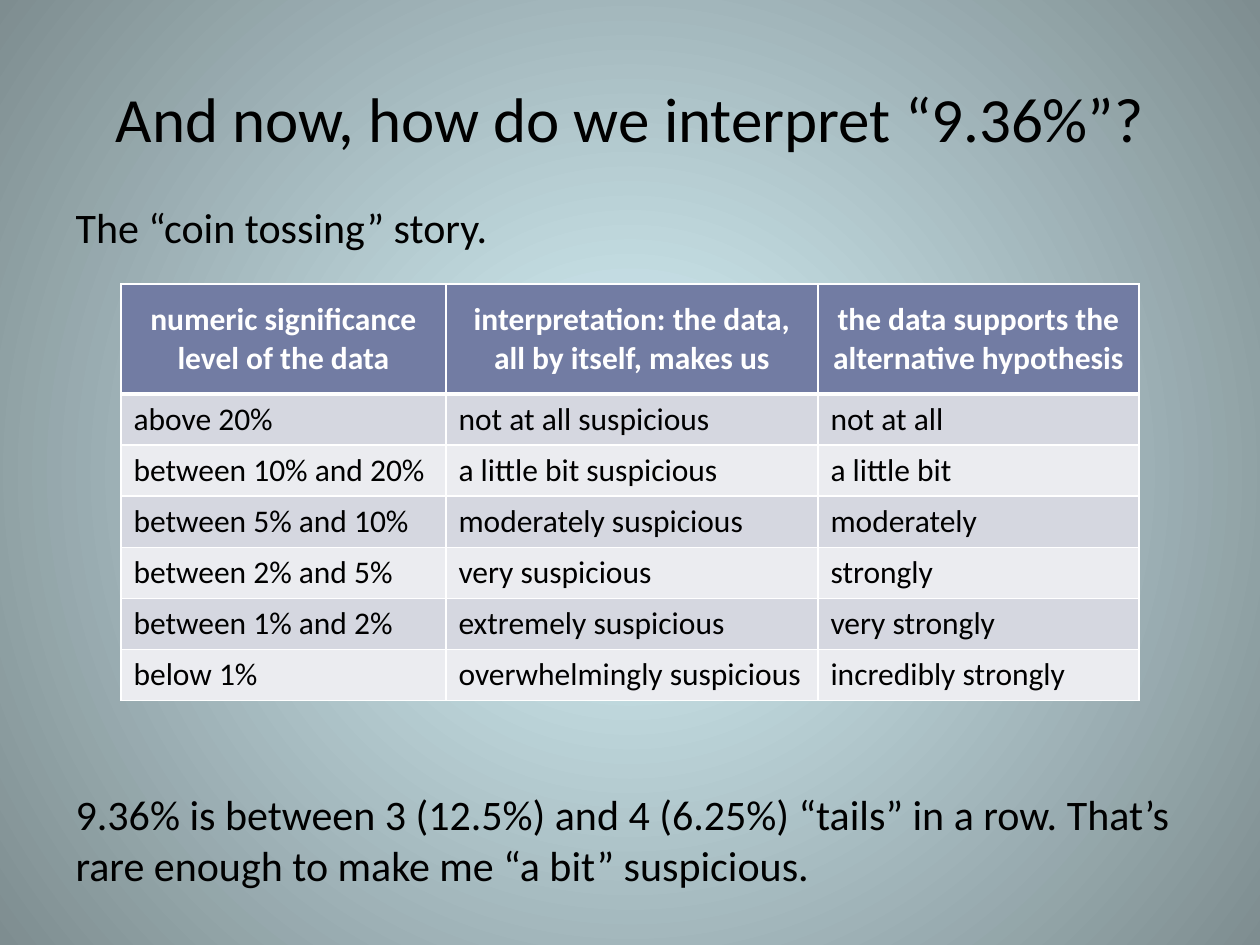
from dataclasses import dataclass

from lxml import etree
from pptx import Presentation
from pptx import util as u
from pptx.dml.color import RGBColor
from pptx.enum import text
from pptx.oxml.ns import qn

PX_PER_INCH = 126


@dataclass(frozen=True)
class Theme:
    font: str = "Calibri"
    title_size: int = 36
    body_size: int = 24
    table_size: int = 18
    ink: str = "000000"
    white: str = "FFFFFF"
    header_fill: str = "727CA3"
    band_fills: tuple = ("D5D7E0", "EBECF0")
    glow: str = "D9F5FC"
    edge: str = "7E8D90"


THEME = Theme()

TITLE = "And now, how do we interpret “9.36%”?"
STORY = "The “coin tossing” story."
CONCLUSION = ("9.36% is between 3 (12.5%) and 4 (6.25%) “tails” in a row. "
              "That’s rare enough to make me “a bit” suspicious.")
CONCLUSION_GAP = 307  # points left free for the table
SIGNIFICANCE_ROWS = [
    ("numeric significance level of the data",
     "interpretation: the data, all by itself, makes us",
     "the data supports the alternative hypothesis"),
    ("above 20%", "not at all suspicious", "not at all"),
    ("between 10% and 20%", "a little bit suspicious", "a little bit"),
    ("between 5% and 10%", "moderately suspicious", "moderately"),
    ("between 2% and 5%", "very suspicious", "strongly"),
    ("between 1% and 2%", "extremely suspicious", "very strongly"),
    ("below 1%", "overwhelmingly suspicious", "incredibly strongly"),
]
COLUMN_WIDTHS = (325, 372, 321)
HEADER_HEIGHT, ROW_HEIGHT = 110, 51


def px(length):
    return u.Inches(length / PX_PER_INCH)


def place(shape, box):
    shape.left, shape.top, shape.width, shape.height = map(px, box)


def add_run(paragraph, wording, size, color=THEME.ink, bold=False):
    run = paragraph.add_run()
    run.text = wording
    font = run.font
    font.name, font.size, font.bold = THEME.font, u.Pt(size), bold
    font.color.rgb = RGBColor.from_string(color)


def paint_background(slide):
    """Radial gradient, light in the middle."""
    fill = slide.background.fill
    fill.gradient()
    for stop, color in zip(fill.gradient_stops, (THEME.glow, THEME.edge)):
        stop.color.rgb = RGBColor.from_string(color)
    gradient = next(slide.element.iter(qn("a:gradFill")))
    for linear in gradient.findall(qn("a:lin")):
        gradient.remove(linear)
    path = etree.SubElement(gradient, qn("a:path"), path="circle")
    etree.SubElement(path, qn("a:fillToRect"),
                     {side: "50000" for side in "ltrb"})


def fill_title(shape, box):
    place(shape, box)
    frame = shape.text_frame
    frame.auto_size = text.MSO_AUTO_SIZE.NONE
    frame.vertical_anchor = text.MSO_ANCHOR.MIDDLE
    paragraph = frame.paragraphs[0]
    paragraph.alignment = text.PP_ALIGN.CENTER
    add_run(paragraph, TITLE, THEME.title_size)


def fill_body(shape, box):
    """Unbulleted text above and below the table."""
    place(shape, box)
    frame = shape.text_frame
    frame.auto_size = text.MSO_AUTO_SIZE.NONE
    story, conclusion = frame.paragraphs[0], frame.add_paragraph()
    conclusion.space_before = u.Pt(CONCLUSION_GAP)
    for paragraph, wording in ((story, STORY), (conclusion, CONCLUSION)):
        properties = paragraph._p.get_or_add_pPr()
        properties.set("marL", "0")
        properties.set("indent", "0")
        etree.SubElement(properties, qn("a:buNone"))
        add_run(paragraph, wording, THEME.body_size)


def set_borders(cell, bottom_width):
    """White rules; they must come before the cell's fill."""
    properties = cell._tc.get_or_add_tcPr()
    widths = {"lnL": 1, "lnR": 1, "lnT": 1, "lnB": bottom_width}
    for position, (side, width) in enumerate(widths.items()):
        line = etree.Element(qn(f"a:{side}"), w=str(u.Pt(width)))
        solid = etree.SubElement(line, qn("a:solidFill"))
        etree.SubElement(solid, qn("a:srgbClr"), val=THEME.white)
        properties.insert(position, line)


def fill_cell(cell, wording, row):
    header = row == 0
    fill = THEME.header_fill if header else THEME.band_fills[(row - 1) % 2]
    cell.fill.solid()
    cell.fill.fore_color.rgb = RGBColor.from_string(fill)
    set_borders(cell, 3 if header else 1)
    cell.vertical_anchor = text.MSO_ANCHOR.MIDDLE
    paragraph = cell.text_frame.paragraphs[0]
    paragraph.alignment = (text.PP_ALIGN.CENTER if header
                           else text.PP_ALIGN.LEFT)
    add_run(paragraph, wording, THEME.table_size,
            THEME.white if header else THEME.ink, header)


def add_significance_table(slide, left, top):
    row_heights = ([HEADER_HEIGHT]
                   + [ROW_HEIGHT] * (len(SIGNIFICANCE_ROWS) - 1))
    box = (left, top, sum(COLUMN_WIDTHS), sum(row_heights))
    table = slide.shapes.add_table(len(row_heights), len(COLUMN_WIDTHS),
                                   *map(px, box)).table
    for column, width in zip(table.columns, COLUMN_WIDTHS):
        column.width = px(width)
    for row, height in zip(table.rows, row_heights):
        row.height = px(height)
    for row, wordings in enumerate(SIGNIFICANCE_ROWS):
        for column, wording in enumerate(wordings):
            fill_cell(table.cell(row, column), wording, row)


def main():
    presentation = Presentation()
    presentation.slide_width, presentation.slide_height = px(1260), px(945)
    slide = presentation.slides.add_slide(presentation.slide_layouts[1])
    paint_background(slide)
    fill_title(slide.shapes.title, (63, 38, 1134, 158))
    fill_body(slide.placeholders[1], (63, 195, 1134, 677))
    add_significance_table(slide, 121, 284)
    presentation.save("out.pptx")


if __name__ == "__main__":
    main()
